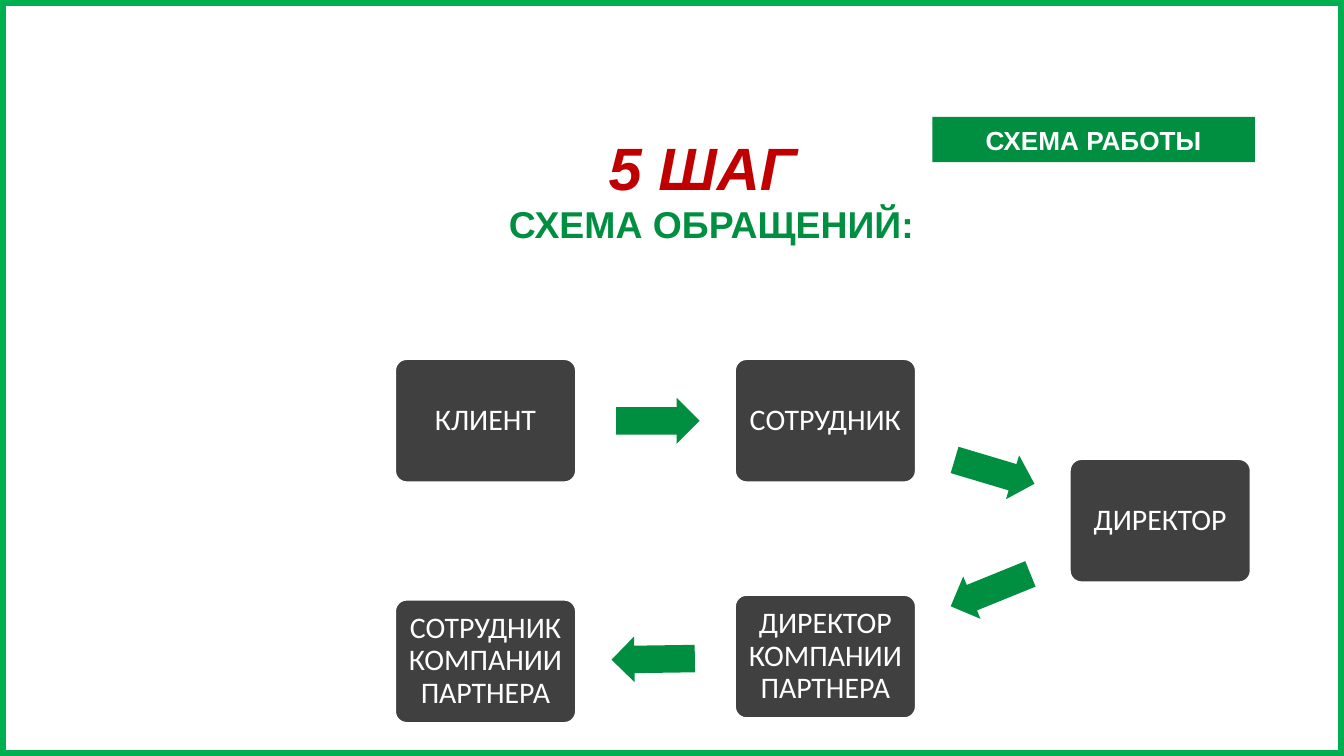
from typing import NamedTuple

from pptx import Presentation
from pptx.dml.color import RGBColor
from pptx.enum.shapes import MSO_SHAPE
from pptx.enum.text import MSO_ANCHOR, PP_ALIGN
from pptx.util import Inches, Pt

RECTANGLE = MSO_SHAPE.RECTANGLE
ROUNDED_RECTANGLE = MSO_SHAPE.ROUNDED_RECTANGLE
RIGHT_ARROW = MSO_SHAPE.RIGHT_ARROW
MIDDLE = MSO_ANCHOR.MIDDLE
CENTER, LEFT = PP_ALIGN.CENTER, PP_ALIGN.LEFT

WHITE = RGBColor(0xFF, 0xFF, 0xFF)
CHARCOAL = RGBColor(0x40, 0x40, 0x40)
GREEN = RGBColor(0x00, 0x8E, 0x40)
FRAME_GREEN = RGBColor(0x00, 0xB0, 0x50)
RED = RGBColor(0xC0, 0x00, 0x00)

SLIDE_WIDTH = Inches(10)
SLIDE_HEIGHT = SLIDE_WIDTH * 9 // 16


class Area(NamedTuple):
    """A rectangle in percent of the slide's width and height."""
    left: float
    top: float
    width: float
    height: float

    def lengths(self) -> tuple[int, int, int, int]:
        return (int(SLIDE_WIDTH * self.left / 100), int(SLIDE_HEIGHT * self.top / 100),
                int(SLIDE_WIDTH * self.width / 100), int(SLIDE_HEIGHT * self.height / 100))


class TextStyle(NamedTuple):
    font: str
    size: int
    color: RGBColor
    bold: bool = False
    italic: bool = False
    alignment: PP_ALIGN = CENTER


class Step(NamedTuple):
    text: str
    left: float
    top: float


class Arrow(NamedTuple):
    left: float
    top: float
    width: float
    rotation: float


STEP_STYLE = TextStyle("Calibri", 16, WHITE)
LABEL_STYLE = TextStyle("Arial", 14, WHITE, bold=True)
NUMBER_STYLE = TextStyle("Arial", 32, RED, bold=True, italic=True, alignment=LEFT)
HEADING_STYLE = TextStyle("Arial", 20, GREEN, bold=True)

STEP_WIDTH, STEP_HEIGHT = 13.6, 16.55
STEP_MARGIN = Inches(0.07)
ARROW_HEIGHT = 6.05
FIRST_COLUMN, SECOND_COLUMN, THIRD_COLUMN = 29.33, 54.62, 79.53

STEPS = [
    Step("КЛИЕНТ", FIRST_COLUMN, 47.37),
    Step("СОТРУДНИК", SECOND_COLUMN, 47.37),
    Step("ДИРЕКТОР", THIRD_COLUMN, 60.6),
    Step("ДИРЕКТОР КОМПАНИИ ПАРТНЕРА", SECOND_COLUMN, 78.57),
    Step("СОТРУДНИК КОМПАНИИ ПАРТНЕРА", FIRST_COLUMN, 79.2),
]
ARROWS = [
    Arrow(45.85, 52.65, 6.2, 0),
    Arrow(70.9, 59.4, 6.2, 16.6),
    Arrow(70.5, 75.03, 6.4, 157.9),
    Arrow(45.5, 84.16, 6.2, 179.2),
]


def write(shape, text: str, style: TextStyle) -> None:
    text_frame = shape.text_frame
    text_frame.text = text
    text_frame.word_wrap = True
    paragraph = text_frame.paragraphs[0]
    paragraph.alignment = style.alignment
    font = paragraph.runs[0].font
    font.name, font.size = style.font, Pt(style.size)
    font.bold, font.italic = style.bold, style.italic
    font.color.rgb = style.color


def add_filled_shape(slide, preset: MSO_SHAPE, area: Area, color: RGBColor):
    shape = slide.shapes.add_shape(preset, *area.lengths())
    shape.shadow.inherit = False
    shape.fill.solid()
    shape.fill.fore_color.rgb = color
    shape.line.fill.background()
    return shape


def add_step(slide, step: Step) -> None:
    area = Area(step.left, step.top, STEP_WIDTH, STEP_HEIGHT)
    shape = add_filled_shape(slide, ROUNDED_RECTANGLE, area, CHARCOAL)
    shape.adjustments[0] = 0.1
    shape.line.color.rgb = WHITE
    shape.line.width = Pt(2)
    write(shape, step.text, STEP_STYLE)
    text_frame = shape.text_frame
    text_frame.vertical_anchor = MIDDLE
    text_frame.margin_left = text_frame.margin_right = STEP_MARGIN
    text_frame.margin_top = text_frame.margin_bottom = STEP_MARGIN
    text_frame.paragraphs[0].line_spacing = 0.9


def add_arrow(slide, arrow: Arrow) -> None:
    area = Area(arrow.left, arrow.top, arrow.width, ARROW_HEIGHT)
    shape = add_filled_shape(slide, RIGHT_ARROW, area, GREEN)
    shape.adjustments[0] = 0.6
    shape.adjustments[1] = 0.5
    shape.rotation = arrow.rotation


def add_text(slide, text: str, area: Area, style: TextStyle) -> None:
    write(slide.shapes.add_textbox(*area.lengths()), text, style)


def add_frame(slide) -> None:
    frame = slide.shapes.add_shape(RECTANGLE, *Area(0, 0, 100, 100).lengths())
    frame.shadow.inherit = False
    frame.fill.background()
    frame.line.color.rgb = FRAME_GREEN
    frame.line.width = Pt(6)


def main() -> None:
    presentation = Presentation()
    presentation.slide_width, presentation.slide_height = SLIDE_WIDTH, SLIDE_HEIGHT
    slide = presentation.slides.add_slide(presentation.slide_layouts[6])

    for step in STEPS:
        add_step(slide, step)
    for arrow in ARROWS:
        add_arrow(slide, arrow)

    label = add_filled_shape(slide, RECTANGLE, Area(69.37, 15.46, 24, 6), GREEN)
    write(label, "СХЕМА РАБОТЫ", LABEL_STYLE)
    label.text_frame.vertical_anchor = MIDDLE
    add_text(slide, "5 ШАГ", Area(44.3, 16.42, 17.4, 11.38), NUMBER_STYLE)
    add_text(slide, "СХЕМА ОБРАЩЕНИЙ: ", Area(21.37, 25.77, 63.9, 7.82), HEADING_STYLE)
    add_frame(slide)

    presentation.save("out.pptx")


if __name__ == "__main__":
    main()
